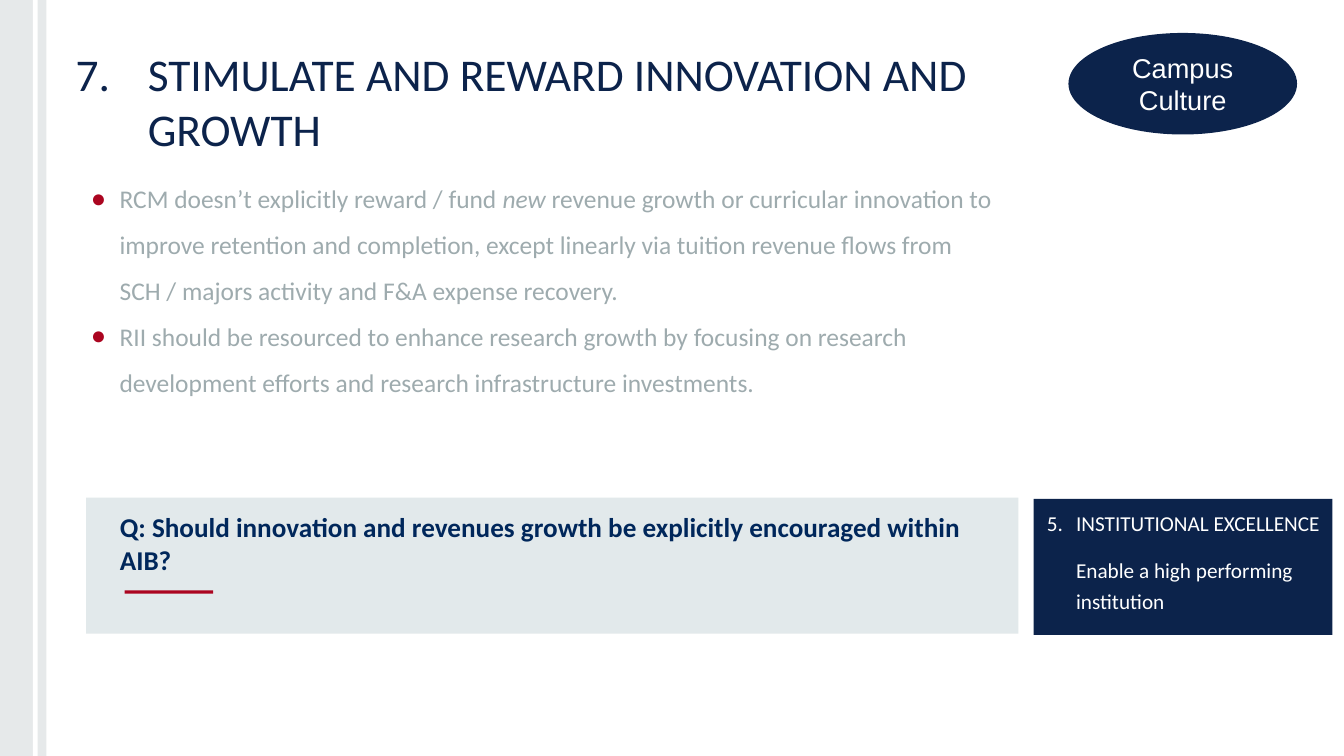
"""Build the campus culture slide on stimulating innovation and growth."""
from dataclasses import dataclass

from lxml import etree
from pptx import Presentation
from pptx import util as u
from pptx.dml.color import RGBColor
from pptx.enum import shapes, text
from pptx.oxml import ns


@dataclass(frozen=True)
class Theme:
    """Colours, fonts and type sizes of the slide."""
    navy: str = "0C234B"
    question_blue: str = "00275B"
    red: str = "AB0520"
    grey: str = "9EABAE"
    pale: str = "E2E9EB"
    white: str = "FFFFFF"
    font: str = "Calibri"
    badge_font: str = "Arial"
    title_size: float = 53.5
    body_size: float = 30
    callout_size: float = 32
    goal_size: float = 25


@dataclass(frozen=True)
class Box:
    """A rectangle in centimetres."""
    left: float
    top: float
    width: float
    height: float

    def inner(self, left, top, width, height):
        """Return a box offset from this one's top left corner."""
        return Box(self.left + left, self.top + top, width, height)

    def lengths(self):
        """Return left, top, width and height as lengths."""
        return [u.Cm(side) for side in (self.left, self.top, self.width, self.height)]


THEME = Theme()
PAGE = Box(0, 0, 55.85, 31.42)


def add_block(page, box, color, kind=shapes.MSO_SHAPE.RECTANGLE):
    """Add a flat filled shape without outline or shadow."""
    block = page.shapes.add_shape(kind, *box.lengths())
    block.shadow.inherit = False
    block.fill.solid()
    block.fill.fore_color.rgb = RGBColor.from_string(color)
    block.line.fill.background()
    return block


def set_frame(shape, insets=(0.25, 0.25, 0.25, 0.25), anchor=text.MSO_ANCHOR.TOP):
    """Set wrapping, anchor and insets, and return the text frame."""
    frame = shape.text_frame
    frame.word_wrap = True
    frame.auto_size = text.MSO_AUTO_SIZE.NONE
    frame.vertical_anchor = anchor
    (frame.margin_left, frame.margin_top,
     frame.margin_right, frame.margin_bottom) = [u.Cm(inset) for inset in insets]
    return frame


def place(placeholder, box):
    """Move a placeholder into a box."""
    (placeholder.left, placeholder.top,
     placeholder.width, placeholder.height) = box.lengths()


def next_para(frame, index, align=text.PP_ALIGN.LEFT):
    """Return the paragraph at an index, adding it when it is not the first."""
    para = frame.add_paragraph() if index else frame.paragraphs[0]
    para.alignment = align
    return para


def set_indent(para, left, first):
    """Set the left and first line indents in centimetres."""
    properties = para._p.get_or_add_pPr()
    properties.set("marL", str(u.Cm(left)))
    properties.set("indent", str(u.Cm(first)))
    return properties


def add_span(para, words, size, color, font=THEME.font, bold=False, italic=False):
    """Add one formatted run to a paragraph."""
    span = para.add_run()
    span.text = words
    span.font.name = font
    span.font.size = u.Pt(size)
    span.font.bold = bold
    span.font.italic = italic
    span.font.color.rgb = RGBColor.from_string(color)


def add_side_band(page, box):
    """Draw the translucent band split by a white stripe."""
    band = add_block(page, box, THEME.grey)
    color = band.fill._xPr.find(".//" + ns.qn("a:srgbClr"))
    etree.SubElement(color, ns.qn("a:alpha"), val="25000")
    add_block(page, box.inner(1.37, 0, 0.2, box.height), THEME.white)


def add_title(page, box):
    """Fill the title placeholder with the numbered heading."""
    title = page.shapes.title
    place(title, box)
    para = next_para(set_frame(title), 0)
    set_indent(para, 3.05, -3)
    add_span(para, "7.\tSTIMULATE AND REWARD INNOVATION AND GROWTH",
             THEME.title_size, THEME.navy)


def add_bullets(page, box, items):
    """Fill the body placeholder with bullets made of (words, italic) spans."""
    body = page.placeholders[1]
    place(body, box)
    frame = set_frame(body)
    for index, spans in enumerate(items):
        para = next_para(frame, index)
        para.line_spacing = 1.5
        para.space_before = u.Pt(0)
        properties = set_indent(para, 1.27, -1.19)
        bullet_color = etree.SubElement(properties, ns.qn("a:buClr"))
        etree.SubElement(bullet_color, ns.qn("a:srgbClr"), val=THEME.red)
        etree.SubElement(properties, ns.qn("a:buFont"), typeface="Arial")
        etree.SubElement(properties, ns.qn("a:buChar"), char="●")
        for words, italic in spans:
            add_span(para, words, THEME.body_size, THEME.grey, italic=italic)


def add_question(page, box):
    """Draw the question panel with its red underline."""
    panel = add_block(page, box, THEME.pale)
    para = next_para(set_frame(panel, (1.4, 0.53, 0.5, 0.25)), 0)
    add_span(para, "Q: Should innovation and revenues growth be explicitly "
             "encouraged within AIB?", THEME.callout_size,
             THEME.question_blue, bold=True)
    add_block(page, box.inner(1.6, 3.86, 3.68, 0.13), THEME.red)


def add_badge(page, box):
    """Draw the oval theme badge."""
    badge = add_block(page, box, THEME.navy, shapes.MSO_SHAPE.OVAL)
    frame = set_frame(badge, (0, 0, 0, 0), text.MSO_ANCHOR.MIDDLE)
    para = next_para(frame, 0, text.PP_ALIGN.CENTER)
    for index, word in enumerate(("Campus", "Culture")):
        if index:
            para.add_line_break()
        add_span(para, word, THEME.callout_size, THEME.white, THEME.badge_font)


def add_goal(page, box):
    """Draw the strategic goal panel."""
    frame = set_frame(add_block(page, box, THEME.navy), (0.5, 0.25, 0.25, 0.13))
    lines = (("5.\tINSTITUTIONAL EXCELLENCE", -1.22, 0),
             ("Enable a high performing institution", 0, 20))
    for index, (words, first, gap) in enumerate(lines):
        para = next_para(frame, index)
        para.line_spacing = 1.2
        para.space_before = u.Pt(gap)
        set_indent(para, 1.27, first)
        add_span(para, words, THEME.goal_size, THEME.white)


def main():
    """Build and save the deck."""
    deck = Presentation()
    deck.slide_width, deck.slide_height = u.Cm(PAGE.width), u.Cm(PAGE.height)
    page = deck.slides.add_slide(deck.slide_layouts[1])
    add_side_band(page, PAGE.inner(0, 0, 1.93, PAGE.height))
    add_title(page, PAGE.inner(2.84, 1.68, 40.1, 2.51))
    add_bullets(page, PAGE.inner(3.45, 6.73, 38.1, 11.66), [
        [("RCM doesn’t explicitly reward / fund ", False),
         ("new", True),
         (" revenue growth or curricular innovation to improve retention and "
          "completion, except linearly via tuition revenue flows from SCH / "
          "majors activity and F&A expense recovery.", False)],
        [("RII should be resourced to enhance research growth by focusing on "
          "research development efforts and research infrastructure "
          "investments.", False)],
    ])
    add_question(page, PAGE.inner(3.58, 20.68, 38.74, 5.66))
    add_badge(page, PAGE.inner(44.4, 1.37, 9.5, 4.22))
    add_goal(page, PAGE.inner(42.95, 20.73, 12.42, 5.66))
    deck.save("out.pptx")


if __name__ == "__main__":
    main()
